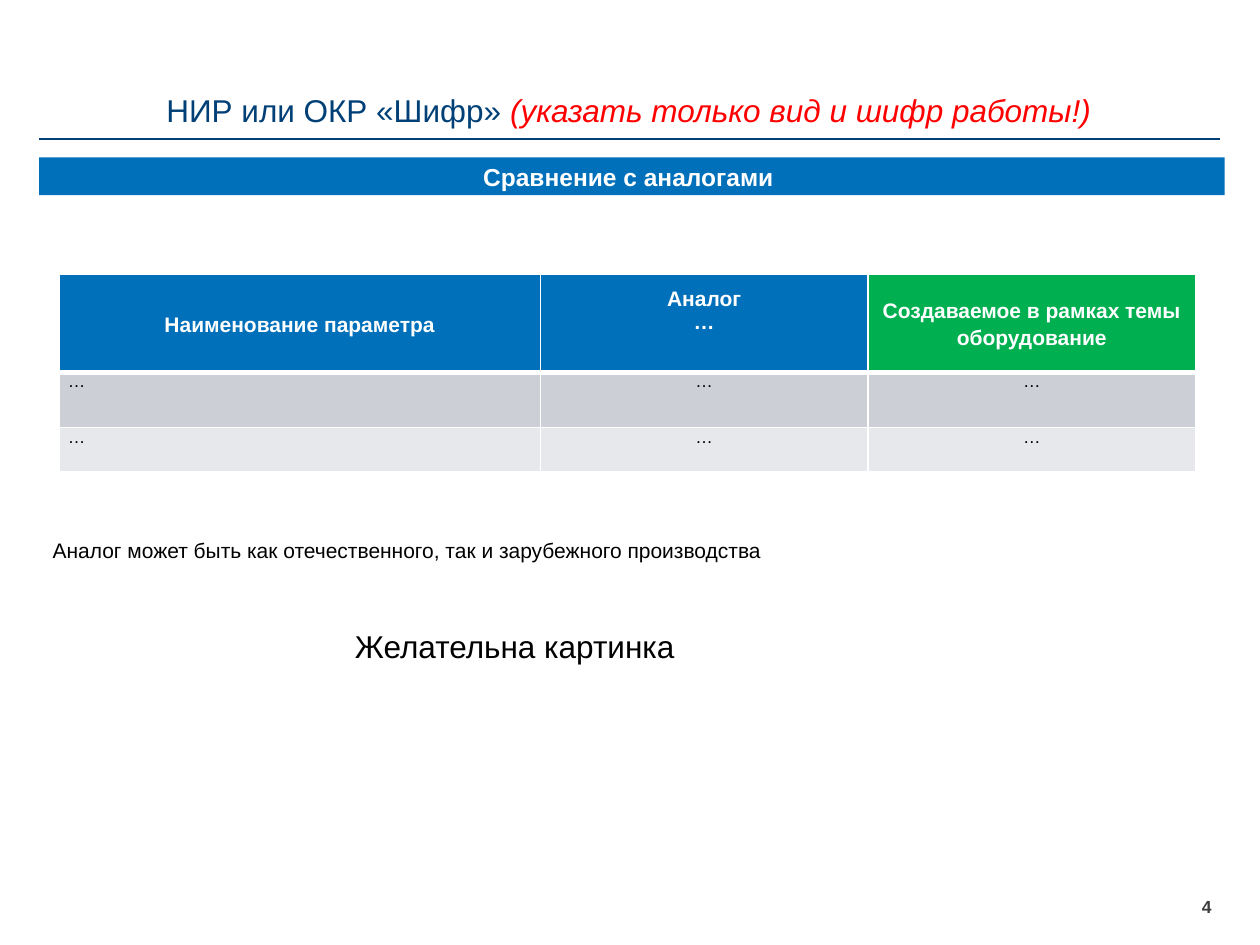
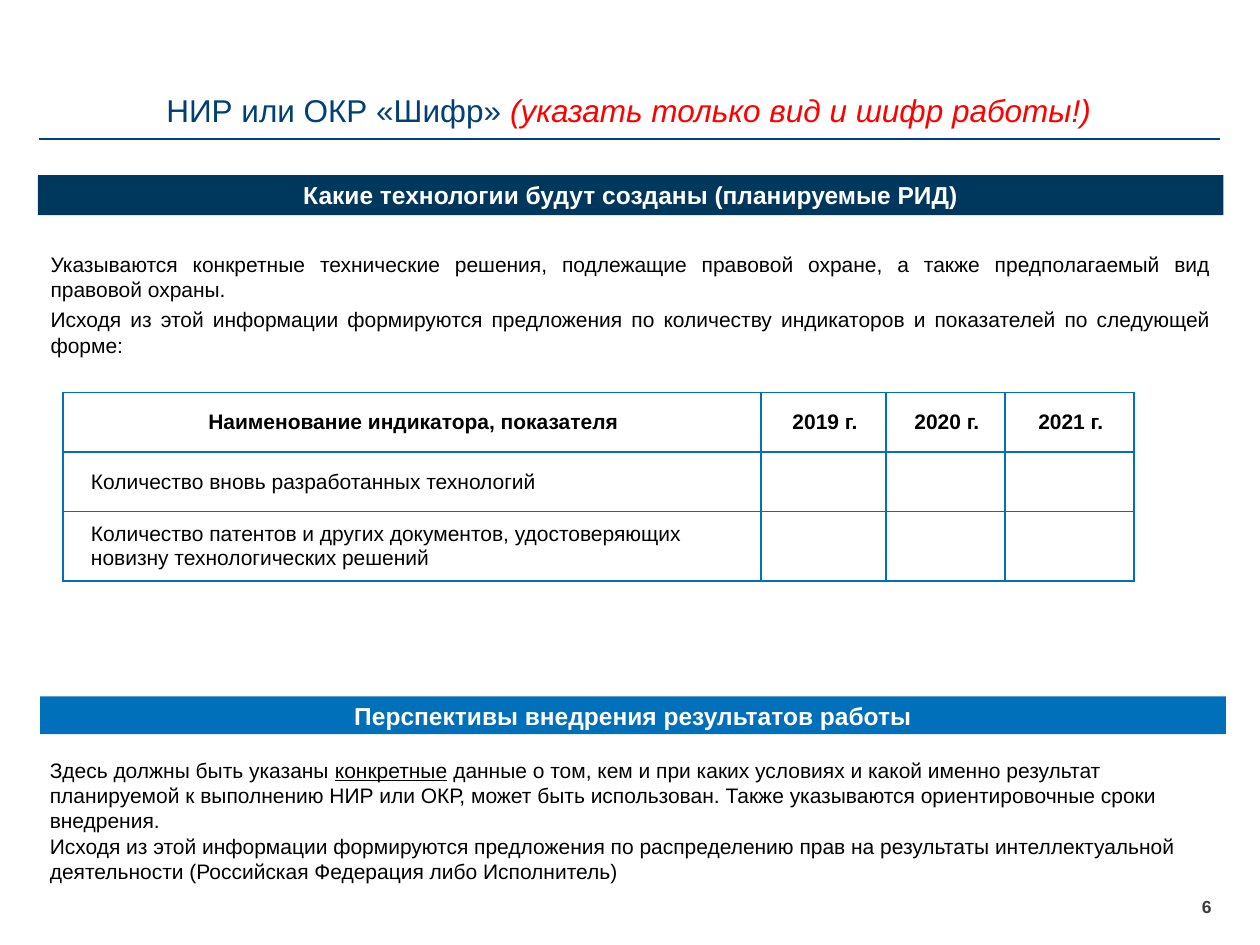
"""Builds two R&D report slides: comparison with analogues, and planned results."""
from lxml import etree
from pptx import Presentation
from pptx.dml.color import RGBColor
from pptx.enum.shapes import MSO_CONNECTOR, MSO_SHAPE
from pptx.enum.text import MSO_ANCHOR, PP_ALIGN
from pptx.oxml.ns import qn
from pptx.util import Pt

LEFT, CENTER, JUSTIFY = PP_ALIGN.LEFT, PP_ALIGN.CENTER, PP_ALIGN.JUSTIFY
TOP, MIDDLE = MSO_ANCHOR.TOP, MSO_ANCHOR.MIDDLE
RECT, STRAIGHT = MSO_SHAPE.RECTANGLE, MSO_CONNECTOR.STRAIGHT
FONT = "Arial"
C = {"title": "004077", "hint": "FF0000", "blue": "0070BA", "navy": "00385D",
     "green": "00B050", "white": "FFFFFF", "black": "000000", "page": "3C3C3C",
     "row1": "CCCFD6", "row2": "E7E8EC"}


def write(tf, paragraphs, size=12, color="black", bold=False, align=LEFT, after=0, spacing=None):
    """Fill a text frame; a paragraph is a list of (text, font overrides)."""
    tf.word_wrap = True
    for i, runs in enumerate(paragraphs):
        p = tf.paragraphs[0] if i == 0 else tf.add_paragraph()
        p.alignment = align
        p.space_after = Pt(after)
        if spacing:
            p.line_spacing = spacing
        for text, look in runs:
            r = p.add_run()
            r.text = text
            r.font.name, r.font.size, r.font.bold = FONT, Pt(size), bold
            r.font.italic = look.get("italic", False)
            r.font.underline = look.get("underline", False)
            r.font.color.rgb = RGBColor.from_string(C[look.get("color", color)])


def style_cell(cell, fill, edge, bottom=1, inset=5, anchor=MIDDLE):
    """Set insets, borders and fill of a table cell."""
    cell.margin_left = cell.margin_right = Pt(inset)
    cell.margin_top = cell.margin_bottom = 0
    cell.vertical_anchor = anchor
    tcPr = cell._tc.get_or_add_tcPr()
    for side, width in (("L", 1), ("R", 1), ("T", 1), ("B", bottom)):
        ln = etree.SubElement(tcPr, qn("a:ln" + side), w=str(Pt(width)))
        solid = etree.SubElement(ln, qn("a:solidFill"))
        etree.SubElement(solid, qn("a:srgbClr"), val=C[edge])
    if fill:
        cell.fill.solid()
        cell.fill.fore_color.rgb = RGBColor.from_string(C[fill])
    else:
        cell.fill.background()


prs = Presentation()
prs.slide_width, prs.slide_height = Pt(720), Pt(540)

TITLE = [[("НИР или ОКР «Шифр» ", {}),
          ("(указать только вид и шифр работы!)", {"color": "hint", "italic": True})]]

slides = [
    {"page": "4",
     "bars": [("Сравнение с аналогами ", 22.3, 90, 21.6, "blue")],
     "texts": [
         ([[("Желательна картинка", {})]], (195.8, 355, 360, 29), 18, LEFT, 0),
         ([[("Аналог может быть как отечественного, так и зарубежного производства", {})]],
          (23, 303.8, 677.5, 21.8), 12, JUSTIFY, 0)],
     "table": ((33.8, 156.5), (275, 187.2, 187.2), (56.2, 31.7, 25.2))},
    {"page": "6",
     "bars": [("Какие технологии будут созданы (планируемые РИД)", 21.6, 100, 23, "navy"),
              ("Перспективы внедрения результатов работы", 23, 398, 21.6, "blue")],
     "texts": [
         ([[("Указываются конкретные технические решения, подлежащие правовой охране, "
             "а также предполагаемый вид правовой охраны.", {})],
           [("Исходя из этой информации формируются предложения по количеству индикаторов "
             "и показателей по следующей форме:", {})]],
          (21.8, 140, 677.5, 68.4), 12, JUSTIFY, 3),
         ([[("Здесь должны быть указаны ", {}), ("конкретные", {"underline": True}),
            (" данные о том, кем и при каких условиях и какой именно результат планируемой "
             "к выполнению НИР или ОКР, может быть использован. Также указываются "
             "ориентировочные сроки внедрения.", {})],
           [("Исходя из этой информации формируются предложения по распределению прав на "
             "результаты интеллектуальной деятельности (Российская Федерация либо "
             "Исполнитель)", {})]],
          (21.4, 429.3, 679, 80), 12, LEFT, 0)],
     "table": ((36, 224.4), (399, 71.4, 68, 73.6), (34, 34, 39.7))},
]

tables = []
for data in slides:
    s = prs.slides.add_slide(prs.slide_layouts[6])

    line = s.shapes.add_connector(STRAIGHT, Pt(22.5), Pt(79.6), Pt(697), Pt(79.6))
    line.line.color.rgb = RGBColor.from_string(C["title"])
    line.line.width = Pt(1)
    etree.SubElement(line._element.spPr, qn("a:effectLst"))

    sp = s.shapes.add_textbox(Pt(686.8), Pt(512), Pt(17.3), Pt(13))
    tf = sp.text_frame
    tf.margin_left = tf.margin_right = tf.margin_top = tf.margin_bottom = 0
    write(tf, [[(data["page"], {})]], 10, "page", True)

    for text, x, y, height, fill in data["bars"]:
        sp = s.shapes.add_shape(RECT, Pt(x), Pt(y), Pt(677.5), Pt(height))
        sp.shadow.inherit = False
        sp.fill.solid()
        sp.fill.fore_color.rgb = RGBColor.from_string(C[fill])
        sp.line.fill.background()
        sp.text_frame.vertical_anchor = MIDDLE
        write(sp.text_frame, [[(text, {})]], 14, "white", True, CENTER)

    title = (TITLE, (21.6, 48.2, 675.4, 29), 18, CENTER, 0)
    for paragraphs, box, size, align, after in data["texts"] + [title]:
        sp = s.shapes.add_textbox(*map(Pt, box))
        color = "title" if paragraphs is TITLE else "black"
        write(sp.text_frame, paragraphs, size, color, align=align, after=after)

    (x, y), widths, heights = data["table"]
    table = s.shapes.add_table(len(heights), len(widths), Pt(x), Pt(y),
                               Pt(sum(widths)), Pt(sum(heights))).table
    table.first_row = table.horz_banding = False
    for column, width in zip(table.columns, widths):
        column.width = Pt(width)
    for row, height in zip(table.rows, heights):
        row.height = Pt(height)
    tables.append(table)

analogues, indicators = tables

headers = [(["Наименование параметра"], "blue", 1.15),
           (["Аналог", "…"], "blue", None),
           (["Создаваемое в рамках темы оборудование"], "green", 1.15)]
for col, (lines, fill, spacing) in enumerate(headers):
    cell = analogues.cell(0, col)
    style_cell(cell, fill, "white", bottom=3)
    write(cell.text_frame, [[(text, {})] for text in lines], 12, "white", True, CENTER,
          after=10 if spacing else 0, spacing=spacing)
    for row in (1, 2):
        cell = analogues.cell(row, col)
        style_cell(cell, f"row{row}", "white", anchor=TOP)
        write(cell.text_frame, [[("…", {})]], 10, align=CENTER if col else JUSTIFY)
analogues.cell(0, 1).margin_bottom = Pt(14)

rows = [["Наименование индикатора, показателя", "2019 г.", "2020 г.", "2021 г."],
        ["Количество вновь разработанных технологий", "", "", ""],
        ["Количество патентов и других документов, удостоверяющих новизну "
         "технологических решений", "", "", ""]]
for row, texts in enumerate(rows):
    for col, text in enumerate(texts):
        cell = indicators.cell(row, col)
        style_cell(cell, None, "blue", inset=1.5)
        if text:
            write(cell.text_frame, [[(text, {})]], bold=row == 0,
                  align=LEFT if row else CENTER)
            cell.margin_left = Pt(16 if row else 3)

prs.save("out.pptx")
